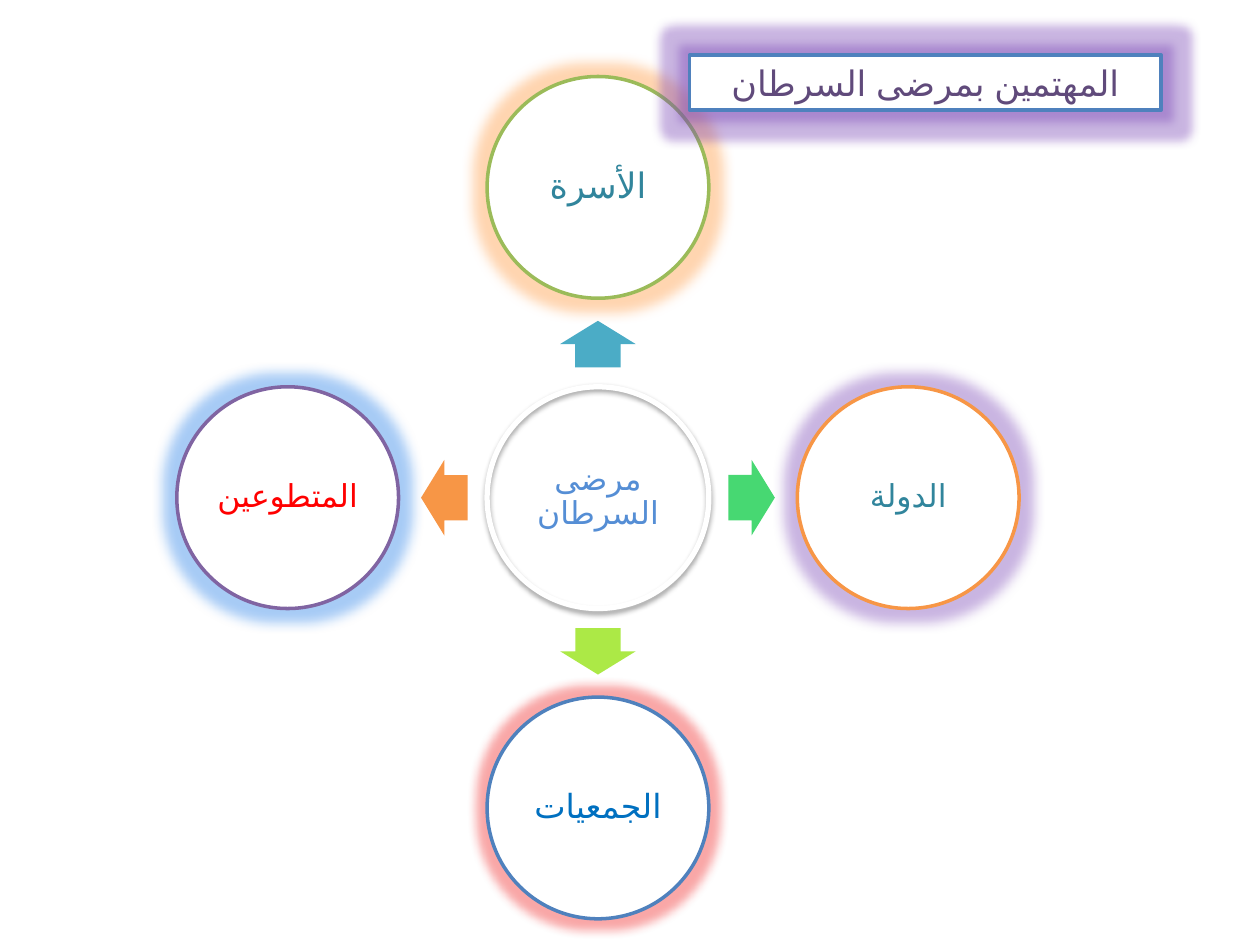
"""Build a radial diagram of the groups that care for cancer patients."""
import math

from lxml import etree
from pptx import Presentation
from pptx.dml.color import RGBColor
from pptx.enum import shapes, text
from pptx.oxml import ns
from pptx.util import Pt

WHITE = RGBColor(0xFF, 0xFF, 0xFF)
BLACK = RGBColor(0x00, 0x00, 0x00)
RED = RGBColor(0xFF, 0x00, 0x00)
BLUE = RGBColor(0x4F, 0x81, 0xBD)
LIGHT_BLUE = RGBColor(0x55, 0x8E, 0xD5)
STRONG_BLUE = RGBColor(0x00, 0x70, 0xC0)
GREEN = RGBColor(0x9B, 0xBB, 0x59)
BRIGHT_GREEN = RGBColor(0x47, 0xD8, 0x72)
LIME = RGBColor(0xAC, 0xE9, 0x46)
AQUA = RGBColor(0x4B, 0xAC, 0xC6)
TEAL = RGBColor(0x31, 0x85, 0x9C)
ORANGE = RGBColor(0xF7, 0x96, 0x46)
PURPLE = RGBColor(0x80, 0x64, 0xA2)
DARK_PURPLE = RGBColor(0x60, 0x4A, 0x7B)
GLOW_ORANGE = RGBColor(0xFF, 0x96, 0x3A)
GLOW_PURPLE = RGBColor(0x7A, 0x46, 0xB6)
GLOW_RED = RGBColor(0xF0, 0x23, 0x23)
GLOW_BLUE = RGBColor(0x23, 0x7D, 0xE8)

CENTER_X, CENTER_Y = 341.7, 284.4
CIRCLE = 126.7
LABEL = CIRCLE / math.sqrt(2)
ORBIT = 177.3
ARROW_ORBIT = 87.8
ARROW_WIDTH, ARROW_HEIGHT = 26.6, 43.2


def add_effect(shape, kind, color, alpha, **settings):
    shape.shadow.inherit = False
    effects = shape._element.spPr.find(ns.qn("a:effectLst"))
    effect = etree.SubElement(effects, ns.qn(f"a:{kind}"))
    for name, value in settings.items():
        effect.set(name, str(value))
    tint = etree.SubElement(effect, ns.qn("a:srgbClr"), val=str(color))
    etree.SubElement(tint, ns.qn("a:alpha"), val=str(alpha * 1000))


def write_label(shape, words, size, color, spacing):
    frame = shape.text_frame
    frame.word_wrap = True
    frame.vertical_anchor = text.MSO_ANCHOR.MIDDLE
    paragraph = frame.paragraphs[0]
    paragraph.alignment = text.PP_ALIGN.CENTER
    paragraph.line_spacing = spacing
    paragraph._p.get_or_add_pPr().set("rtl", "1")
    run = paragraph.add_run()
    run.text = words
    run.font.size = Pt(size)
    run.font.color.rgb = color
    run.font.name = "Arial"
    properties = run._r.get_or_add_rPr()
    properties.set("lang", "ar-SA")
    etree.SubElement(properties, ns.qn("a:cs"), typeface="Arial")


presentation = Presentation()
presentation.slide_width, presentation.slide_height = Pt(720), Pt(540)
slide = presentation.slides.add_slide(presentation.slide_layouts[6])

arrows = [(270, AQUA), (0, BRIGHT_GREEN), (90, LIME), (180, ORANGE)]
for angle, color in arrows:
    x = CENTER_X + ARROW_ORBIT * math.cos(math.radians(angle))
    y = CENTER_Y + ARROW_ORBIT * math.sin(math.radians(angle))
    arrow = slide.shapes.add_shape(
        shapes.MSO_SHAPE.RIGHT_ARROW,
        Pt(x - ARROW_WIDTH / 2), Pt(y - ARROW_HEIGHT / 2),
        Pt(ARROW_WIDTH), Pt(ARROW_HEIGHT))
    arrow.adjustments[0], arrow.adjustments[1] = 0.6, 0.5
    arrow.rotation = angle
    arrow.fill.solid()
    arrow.fill.fore_color.rgb = color
    arrow.line.fill.background()
    arrow.shadow.inherit = False

circles = [
    ("مرضى السرطان", 18, LIGHT_BLUE, WHITE, 0, 0, None, 0),
    ("الأسرة", 20, TEAL, GREEN, 270, ORBIT, GLOW_ORANGE, 14),
    ("الدولة", 18, TEAL, ORANGE, 0, ORBIT, GLOW_PURPLE, 14),
    ("الجمعيات", 19, STRONG_BLUE, BLUE, 90, ORBIT, GLOW_RED, 11),
    ("المتطوعين", 18, RED, PURPLE, 180, ORBIT, GLOW_BLUE, 14),
]
for words, size, color, outline, angle, distance, glow, radius in circles:
    x = CENTER_X + distance * math.cos(math.radians(angle))
    y = CENTER_Y + distance * math.sin(math.radians(angle))
    circle = slide.shapes.add_shape(
        shapes.MSO_SHAPE.OVAL, Pt(x - CIRCLE / 2), Pt(y - CIRCLE / 2),
        Pt(CIRCLE), Pt(CIRCLE))
    circle.line.color.rgb = outline
    if glow:
        circle.fill.solid()
        circle.fill.fore_color.rgb = WHITE
        circle.line.width = Pt(2)
        add_effect(circle, "glow", glow, 40, rad=Pt(radius))
    else:
        circle.fill.background()
        circle.line.width = Pt(3)
        add_effect(circle, "outerShdw", BLACK, 38,
                   blurRad=Pt(3.1), dist=Pt(1.6), dir=90 * 60000)
    label = slide.shapes.add_textbox(
        Pt(x - LABEL / 2), Pt(y - LABEL / 2), Pt(LABEL), Pt(LABEL))
    frame = label.text_frame
    frame.margin_left = frame.margin_right = Pt(2)
    frame.margin_top = frame.margin_bottom = Pt(2)
    write_label(label, words, size, color, 0.9)

title = slide.shapes.add_shape(
    shapes.MSO_SHAPE.RECTANGLE, Pt(394), Pt(31.5), Pt(269.5), Pt(31.5))
title.fill.solid()
title.fill.fore_color.rgb = WHITE
title.line.color.rgb = BLUE
title.line.width = Pt(2)
add_effect(title, "glow", GLOW_PURPLE, 40, rad=Pt(11))
title.text_frame.auto_size = text.MSO_AUTO_SIZE.SHAPE_TO_FIT_TEXT
write_label(title, "المهتمين بمرضى السرطان", 20, DARK_PURPLE, 1.0)

presentation.save("out.pptx")
